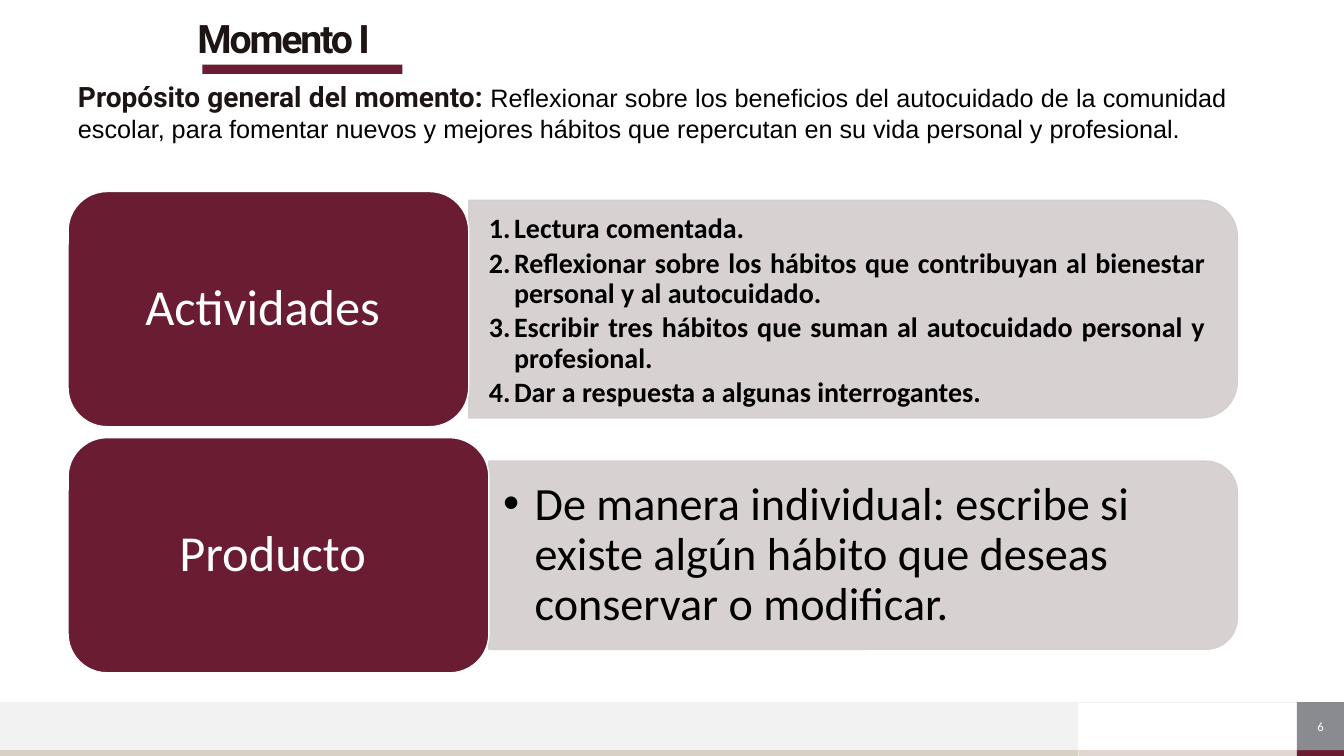
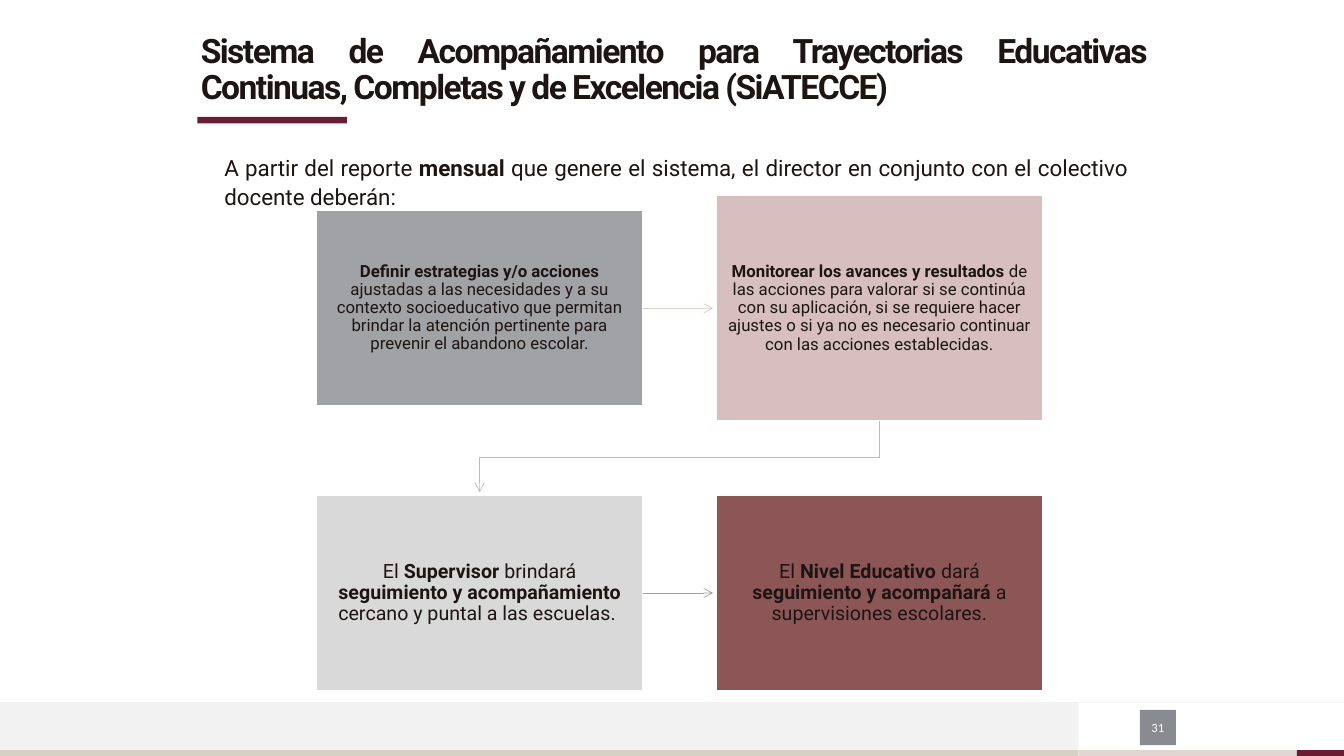
import pptx
import pptx.dml.color
import pptx.enum.shapes
import pptx.enum.text
import pptx.oxml.ns
import pptx.util
from lxml import etree

COLUMNS, ROWS = 160, 90
CELL = pptx.util.Inches(1) // 12
COLORS = {
    "wine": "691C32", "ink": "1D1513", "black": "000000", "white": "FFFFFF",
    "panel": "D4CDCE", "band": "F2F2F2", "sand": "D6D1C4", "blush": "E2D6D3",
    "badge": "898B90", "gray": "A0A2A6", "rose": "D8BFBF", "silver": "D9D9D9",
    "brick": "8C5656", "sage": "B5C0AD", "moss": "97A99F",
}
ALIGN = pptx.enum.text.PP_ALIGN
ANCHOR = pptx.enum.text.MSO_ANCHOR
SHAPE = pptx.enum.shapes.MSO_SHAPE


def cells(count):
    return pptx.util.Emu(round(count * CELL))


def rgb(name):
    return pptx.dml.color.RGBColor.from_string(COLORS[name])


def add_xml(parent, tag, **attributes):
    return etree.SubElement(parent, pptx.oxml.ns.qn(tag), attributes)


def set_bullet(para, bullet, indent):
    properties = para._p.get_or_add_pPr()
    properties.set("marL", str(cells(indent)))
    properties.set("indent", str(-cells(indent)))
    if bullet is None:
        add_xml(properties, "a:buNone")
        return
    add_xml(add_xml(properties, "a:buClr"), "a:srgbClr", val=COLORS["black"])
    if bullet == "1.":
        add_xml(properties, "a:buFont", typeface="Calibri")
        add_xml(properties, "a:buAutoNum", type="arabicPeriod")
    else:
        add_xml(properties, "a:buFont", typeface="Arial")
        add_xml(properties, "a:buChar", char=bullet)


def write(box, text, size=12, font="Roboto", color="ink", bold=False, strong=None,
          align=ALIGN.CENTER, anchor=ANCHOR.MIDDLE, inset=(0, 0), line=1.0,
          after=0, tracking=0, bullet=None, indent=0):
    """Lines split paragraphs; text between asterisks is bold."""
    frame = box.text_frame
    frame.word_wrap = True
    frame.auto_size = pptx.enum.text.MSO_AUTO_SIZE.NONE
    frame.vertical_anchor = anchor
    frame.margin_left = frame.margin_right = cells(inset[0])
    frame.margin_top = frame.margin_bottom = cells(inset[1])
    plain = {"size": size, "font": font, "color": color}
    for number, content in enumerate(text.split("\n")):
        para = frame.add_paragraph() if number else frame.paragraphs[0]
        set_bullet(para, bullet, indent)
        para.alignment = align
        para.line_spacing = line
        para.space_before = pptx.util.Pt(0)
        para.space_after = pptx.util.Pt(after)
        for position, piece in enumerate(content.split("*")):
            if not piece:
                continue
            marked = position % 2 == 1
            style = {**plain, **(strong or {})} if marked else plain
            span = para.add_run()
            span.text = piece
            span.font.size = pptx.util.Pt(style["size"])
            span.font.name = style["font"]
            span.font.color.rgb = rgb(style["color"])
            span.font.bold = bold or marked
            if tracking:
                span.font._element.set("spc", str(round(tracking * 100)))


class Presenter:
    def __init__(self):
        self.deck = pptx.Presentation()
        self.deck.slide_width = cells(COLUMNS)
        self.deck.slide_height = cells(ROWS)
        self.layout = self.deck.slide_layouts[1]
        for holder in list(self.layout.placeholders)[2:]:
            holder.element.getparent().remove(holder.element)
        self.page = None

    def new_page(self):
        first = self.page is None
        self.page = self.deck.slides.add_slide(self.layout)
        if first:
            self.share_footer()

    def share_footer(self):
        parts = [
            self.block((128.4, 89.3, 26, 0.7), "blush"),
            self.block((0, 83.6, 128.4, 5.7), "band"),
            self.block((0, 89.3, 128.4, 0.7), "sand"),
            self.block((154.4, 89.3, 5.6, 0.7), "wine"),
            self.connect([(160, 83.6), (0, 83.6)], "band", head=False),
        ]
        for part in parts:
            self.layout.shapes.element.append(part.element)

    def block(self, area, fill, kind=SHAPE.RECTANGLE, outline=None):
        shape = self.page.shapes.add_shape(kind, *map(cells, area))
        shape.shadow.inherit = False
        shape.fill.solid()
        shape.fill.fore_color.rgb = rgb(fill)
        if outline:
            shape.line.color.rgb = rgb(outline)
            shape.line.width = pptx.util.Pt(1)
        else:
            shape.line.fill.background()
        return shape

    def card(self, area, fill, text, kind=SHAPE.RECTANGLE, **style):
        write(self.block(area, fill, kind, "white"), text, line=0.9, **style)

    def side_panel(self, area):
        left, top, width, height = area
        turned = (left + (width - height) / 2, top + (height - width) / 2, height, width)
        panel = self.block(turned, "panel", SHAPE.ROUND_2_SAME_RECTANGLE, "panel")
        panel.rotation = 90
        for color in panel.element.spPr.iter(pptx.oxml.ns.qn("a:srgbClr")):
            add_xml(color, "a:alpha", val="90000")

    def badge(self, area, number):
        write(self.block(area, "badge"), number, size=9, font="Calibri", color="white")

    def text(self, area, text, **style):
        write(self.page.shapes.add_textbox(*map(cells, area)), text, **style)

    def fill_placeholder(self, holder, area, text, **style):
        holder.left, holder.top, holder.width, holder.height = map(cells, area)
        self.page.shapes.element.append(holder.element)
        write(holder, text, **style)

    def title(self, area, text, rule, **style):
        self.block(rule, "wine")
        self.fill_placeholder(self.page.shapes.title, area, text,
                              bold=True, line=0.9, **style)

    def body(self, area, text, **style):
        self.fill_placeholder(self.page.placeholders[1], area, text, **style)

    def connect(self, points, color, head=True):
        corners = [tuple(map(cells, point)) for point in points]
        shapes = self.page.shapes
        if len(corners) == 2:
            line = shapes.add_connector(pptx.enum.shapes.MSO_CONNECTOR.STRAIGHT,
                                        *corners[0], *corners[1])
        else:
            outline = shapes.build_freeform(*corners[0])
            outline.add_line_segments(corners[1:], close=False)
            line = outline.convert_to_shape()
            line.fill.background()
        line.line.color.rgb = rgb(color)
        line.line.width = pptx.util.Pt(0.5)
        properties = line.element.spPr
        if head:
            add_xml(properties.find(pptx.oxml.ns.qn("a:ln")), "a:tailEnd", type="arrow")
        add_xml(properties, "a:effectLst")
        return line


def build_moment(show):
    show.new_page()
    show.badge((154.4, 83.6, 5.6, 5.7), "6")
    show.title((23.5, 2, 111.5, 5.6), "Momento I", (24.1, 7.7, 23.8, 1.1),
               size=28, tracking=-1.5, align=ALIGN.LEFT)
    show.text((8.1, 8.9, 139.1, 12.5),
              "*Propósito general del momento: *Reflexionar sobre los beneficios del "
              "autocuidado de la comunidad escolar, para fomentar nuevos y mejores "
              "hábitos que repercutan en su vida personal y profesional.",
              size=18, font="Arial", color="black", strong={"size": 20, "font": "Roboto", "color": "ink"},
              align=ALIGN.JUSTIFY, anchor=ANCHOR.TOP, inset=(1.2, 0.6))

    right = 147.3
    for label, top, width, height in (("Actividades ", 22.8, 47.7, 25.9),
                                      ("Producto ", 52.1, 50.1, 22.4)):
        edge = 8.1 + width
        show.side_panel((edge, top + 14 - height / 2, right - edge, height))
        show.card((8.1, top, width, 28), "wine", label, SHAPE.ROUNDED_RECTANGLE,
                  size=36, font="Calibri", color="white", inset=(1.8, 0.9))

    listing = {"font": "Calibri", "color": "black", "line": 0.9}
    show.body((55.8, 25.4, 90.1, 23.4),
              "Lectura comentada.\n"
              "Reflexionar sobre los hábitos que contribuyan al bienestar personal y al autocuidado.\n"
              "Escribir tres hábitos que suman al autocuidado personal y profesional.\n"
              "Dar a respuesta a algunas interrogantes.",
              size=20, bold=True, align=ALIGN.JUSTIFY, inset=(2.4, 1.2),
              after=3, bullet="1.", indent=3, **listing)
    show.text((58.2, 56, 88, 20.2),
              "De manera individual: escribe si existe algún hábito que deseas "
              "conservar o modificar.",
              size=33, align=ALIGN.LEFT, inset=(1.7, 0.8), after=5,
              bullet="•", indent=3.75, **listing)


def build_system(show):
    show.new_page()
    show.badge((135.7, 84.5, 4.3, 4.2), "31")
    show.title((22.7, 3.5, 114.9, 10),
               "Sistema de Acompañamiento para Trayectorias Educativas Continuas, "
               "Completas y de Excelencia (SiATECCE)", (23.5, 13.9, 17.8, 0.8),
               size=24, tracking=-1.1, align=ALIGN.JUSTIFY, anchor=ANCHOR.TOP,
               inset=(1.2, 0.6))
    show.body((25.5, 17.6, 110, 8),
              "A partir del reporte *mensual* que genere el sistema, el director en "
              "conjunto con el colectivo docente deberán:",
              size=16, line=1.06, align=ALIGN.JUSTIFY, anchor=ANCHOR.TOP, inset=(1.2, 0.6))

    lefts, middles, width = (37.7, 85.3), (36.7, 70.6), 38.8
    steps = (
        ("gray", 23.3, 12,
         "*Definir estrategias y/o acciones *ajustadas a las necesidades y a su contexto "
         "socioeducativo que permitan brindar la atención pertinente para prevenir el "
         "abandono escolar."),
        ("rose", 26.8, 12,
         "*Monitorear los avances y resultados *de las acciones para valorar si se "
         "continúa con su aplicación, si se requiere hacer ajustes o si ya no es "
         "necesario continuar con las acciones establecidas."),
        ("silver", 23.3, 14,
         "El *Supervisor *brindará *seguimiento y acompañamiento *cercano y puntal a "
         "las escuelas. "),
        ("brick", 23.3, 14,
         "El *Nivel Educativo *dará *seguimiento y acompañará *a supervisiones escolares."),
    )
    for index, (fill, height, size, text) in enumerate(steps):
        row, column = divmod(index, 2)
        show.card((lefts[column], middles[row] - height / 2, width, height), fill, text,
                  size=size, inset=(size / 11, size / 11), after=size * 0.35)

    for middle, color in zip(middles, ("sand", "moss")):
        show.connect([(lefts[0] + width, middle), (lefts[1] - 0.4, middle)], color)
    start, end = lefts[1] + width / 2, lefts[0] + width / 2
    show.connect([(start, 50.1), (start, 54.5), (end, 54.5), (end, 58.6)], "sage")


def main():
    show = Presenter()
    build_moment(show)
    build_system(show)
    show.deck.save("out.pptx")


if __name__ == "__main__":
    main()
